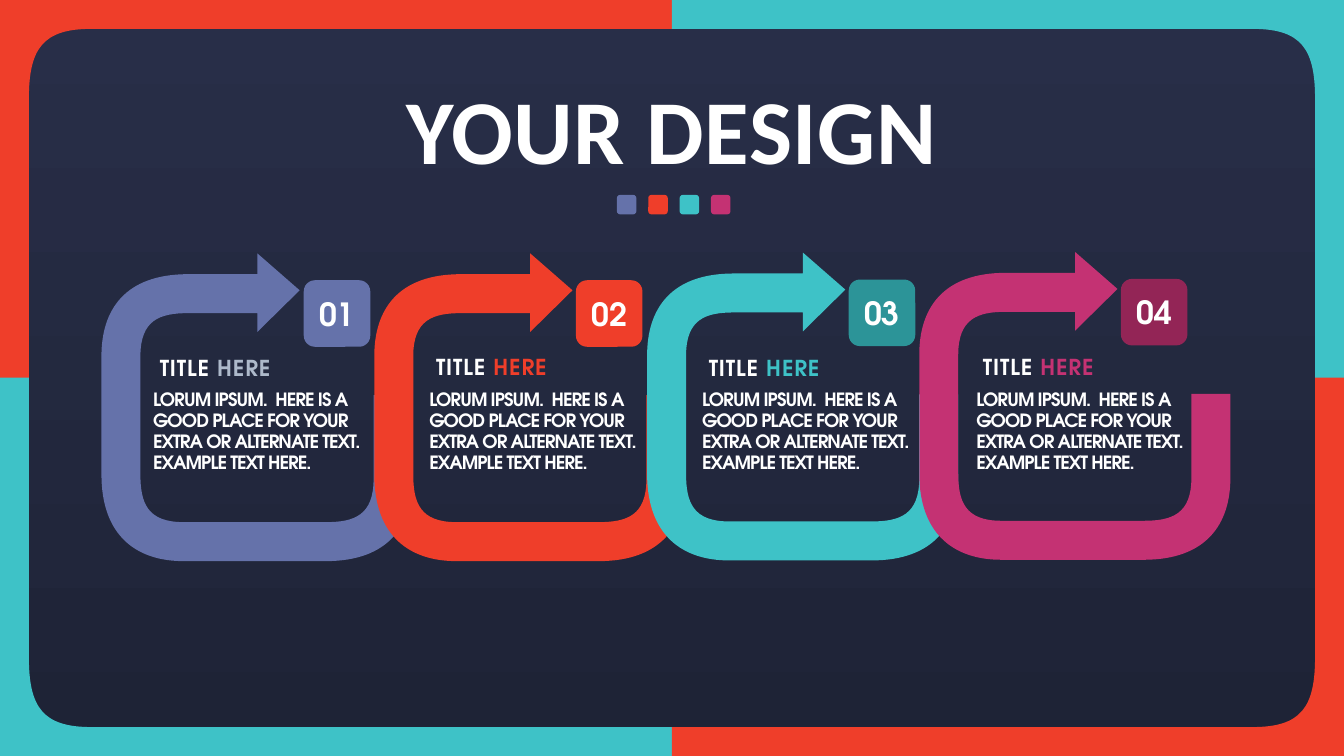
import dataclasses
import itertools

import lxml.etree
import pptx
import pptx.dml.color
import pptx.enum.shapes
import pptx.enum.text
import pptx.oxml.ns
import pptx.shapes.autoshape
import pptx.shapes.shapetree
import pptx.slide
import pptx.text.text
import pptx.util

Inches = pptx.util.Inches
Pt = pptx.util.Pt
qn = pptx.oxml.ns.qn
Outline = list[list[tuple[float, float]]]

WIDTH, HEIGHT = 20, 11.25
FONT = "TeX Gyre Adventor"
WHITE, RED, TEAL, BLUE, PINK = "FFFFFF", "EF3E2A", "3EC2C7", "6572AA", "C43273"
BODY = "LORUM IPSUM.  HERE IS A GOOD PLACE FOR YOUR EXTRA OR ALTERNATE TEXT. EXAMPLE TEXT HERE."
ARROW = [
    [(2.32, 0.89)], [(1.29, 0.89)],
    [(0.87, 0.89), (0.58, 0.99), (0.58, 1.53)], [(0.58, 3.29)],
    [(0.58, 3.71), (0.68, 4), (1.22, 4)], [(3.34, 4)],
    [(3.76, 4), (4.05, 3.9), (4.05, 3.36)], [(4.05, 2.11)], [(4.63, 2.11)], [(4.63, 3.36)],
    [(4.63, 4.04), (4.28, 4.58), (3.34, 4.58)], [(1.22, 4.58)],
    [(0.54, 4.58), (0, 4.22), (0, 3.29)], [(0, 1.53)],
    [(0, 0.84), (0.35, 0.31), (1.29, 0.31)], [(2.32, 0.31)],
    [(2.32, 0)], [(2.95, 0.55)], [(2.32, 1.17)],
]
CORNER = [
    [(0, 5.63)], [(0, 0)], [(10, 0)], [(10, 0.43)], [(1.36, 0.43)],
    [(0.64, 0.43), (0.43, 0.72), (0.43, 1.47)], [(0.43, 5.63)],
]


@dataclasses.dataclass(frozen=True)
class Step:
    number: str
    left: float
    top: float
    badge_left: float
    text_left: float
    title_top: float
    arrow: str
    badge: str
    accent: str


STEPS = [
    Step("01", 1.51, 3.77, 4.52, 2.18, 5.28, BLUE, BLUE, "ADB9CA"),
    Step("02", 5.57, 3.77, 8.57, 6.29, 5.27, RED, RED, RED),
    Step("03", 9.63, 3.76, 12.63, 10.35, 5.28, TEAL, "2C9498", TEAL),
    Step("04", 13.68, 3.75, 16.68, 14.43, 5.27, PINK, "932556", PINK),
]


def colour(value: str) -> pptx.dml.color.RGBColor:
    return pptx.dml.color.RGBColor.from_string(value)


def paint(shape: pptx.shapes.autoshape.Shape, fill: str) -> None:
    shape.shadow.inherit = False
    shape.fill.solid()
    shape.fill.fore_color.rgb = colour(fill)
    shape.line.fill.background()


def add_outline(shapes: pptx.shapes.shapetree.SlideShapes, outline: Outline, fill: str) -> None:
    points = [(Inches(x), Inches(y)) for x, y in itertools.chain.from_iterable(outline)]
    builder = shapes.build_freeform(*points[0], scale=1.0)
    builder.add_line_segments(points[1:], close=True)
    shape = builder.convert_to_shape()
    paint(shape, fill)
    lines = iter(list(shape._element.iter(qn("a:lnTo"))))
    for segment in outline[1:]:
        parts = list(itertools.islice(lines, len(segment)))
        if len(parts) == 3:
            curve = lxml.etree.Element(qn("a:cubicBezTo"))
            parts[0].addprevious(curve)
            for part in parts:
                curve.append(part[0])
                part.getparent().remove(part)


def add_square(shapes: pptx.shapes.shapetree.SlideShapes, left: float, top: float,
               side: float, fill: str) -> pptx.shapes.autoshape.Shape:
    square = shapes.add_shape(pptx.enum.shapes.MSO_SHAPE.ROUNDED_RECTANGLE,
                              Inches(left), Inches(top), Inches(side), Inches(side))
    paint(square, fill)
    return square


def style(para: pptx.text.text._Paragraph, size: float, font: str = FONT) -> None:
    para.font.name = font
    para.font.size = Pt(size)
    para.font.bold = True
    para.font.color.rgb = colour(WHITE)


def add_text(page: pptx.slide.Slide, place: tuple[float, float, float, float], spans: list[tuple[str, str]],
             size: float, leading: float, tracking: float, font: str = FONT) -> pptx.shapes.autoshape.Shape:
    box = page.shapes.add_textbox(*map(Inches, place))
    box.text_frame.word_wrap = True
    box.text_frame.auto_size = pptx.enum.text.MSO_AUTO_SIZE.SHAPE_TO_FIT_TEXT
    para = box.text_frame.paragraphs[0]
    para.line_spacing = Pt(leading)
    style(para, size, font)
    for text, fill in spans:
        span = para.add_run()
        span.text = text
        span.font.color.rgb = colour(fill)
        span.font._element.set("spc", str(round(tracking * 100)))
    return box


def add_arrow(page: pptx.slide.Slide, step: Step) -> None:
    group = page.shapes.add_group_shape()
    outline = [[(step.left + x, step.top + y) for x, y in segment] for segment in ARROW]
    add_outline(group.shapes, outline, step.arrow)
    badge = add_square(group.shapes, step.badge_left, step.top + 0.4, 0.99, step.badge)
    badge.text_frame.vertical_anchor = pptx.enum.text.MSO_ANCHOR.MIDDLE
    para = badge.text_frame.paragraphs[0]
    para.text = step.number
    para.alignment = pptx.enum.text.PP_ALIGN.CENTER
    style(para, 34.2)


def add_caption(page: pptx.slide.Slide, step: Step) -> None:
    add_text(page, (step.text_left, 5.74, 3.29, 1.39), [(BODY, WHITE)], 19.6, 22.5, -1)
    add_text(page, (step.text_left + 0.1, step.title_top, 3.17, 0.44),
             [("TITLE ", WHITE), ("HERE", step.accent)], 23.5, 24.5, 1)


def add_heading(page: pptx.slide.Slide) -> None:
    box = add_text(page, (4.24, 1.49, 11.52, 1.29), [("YOUR DESIGN", WHITE)], 97.8, 88, 0.7, "Calibri")
    frame = box.text_frame
    frame.margin_left = frame.margin_right = frame.margin_top = frame.margin_bottom = 0
    frame.paragraphs[0].alignment = pptx.enum.text.PP_ALIGN.CENTER
    for index, fill in enumerate((BLUE, RED, TEAL, PINK)):
        add_square(page.shapes, 9.18 + index * 1.4 / 3, 2.9, 0.29, fill)


def add_frame(page: pptx.slide.Slide) -> None:
    for bottom, right in itertools.product((False, True), repeat=2):
        outline = [[(WIDTH - x if right else x, HEIGHT - y if bottom else y) for x, y in segment]
                   for segment in CORNER]
        add_outline(page.shapes, outline, RED if bottom == right else TEAL)


def add_background(page: pptx.slide.Slide) -> None:
    fill = page.background.fill
    fill.gradient()
    fill.gradient_angle = 270
    for stop, value in zip(fill.gradient_stops, ("282E48", "1E2336")):
        stop.color.rgb = colour(value)


def main() -> None:
    """Build the four-step arrow slide and save it."""
    deck = pptx.Presentation()
    deck.slide_width, deck.slide_height = Inches(WIDTH), Inches(HEIGHT)
    page = deck.slides.add_slide(deck.slide_layouts[6])
    add_background(page)
    for step in STEPS:
        add_arrow(page, step)
    add_heading(page)
    for step in STEPS:
        add_caption(page, step)
    add_frame(page)
    deck.save("out.pptx")


if __name__ == "__main__":
    main()
